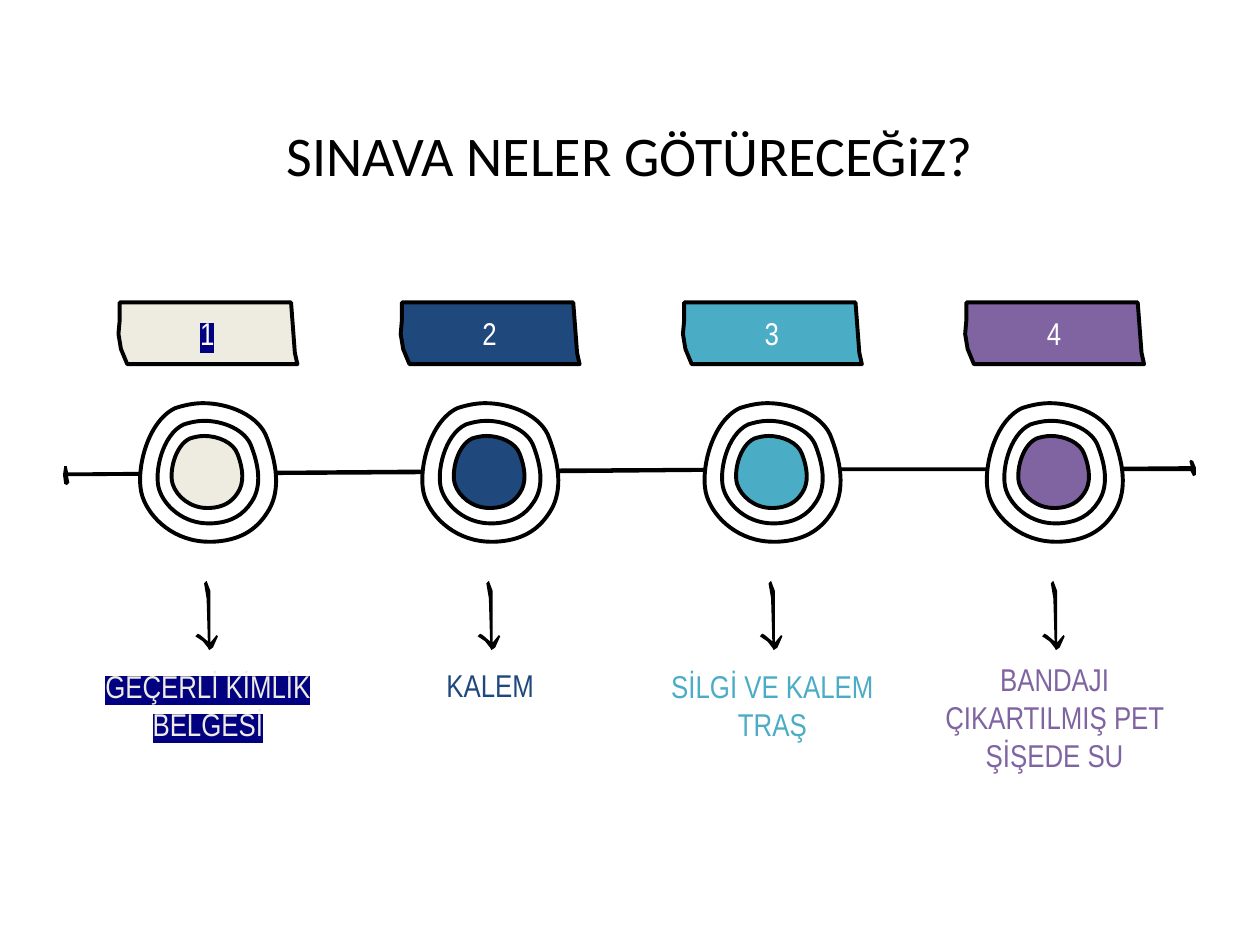
from lxml.etree import SubElement
from pptx import Presentation
from pptx.dml.color import RGBColor
from pptx.enum.text import MSO_ANCHOR, PP_ALIGN
from pptx.oxml.ns import qn
from pptx.util import Inches, Pt

COLORS = {"ink": "000000", "paper": "FFFFFF", "mark": "000080",
          "cream": "EEECE1", "navy": "1F497D", "teal": "4BACC6", "purple": "8064A2"}
PITCH = 2.24

AXIS = [(9.45, 3.65), (9.44, 3.66), (9.45, 3.7), (8.25, 3.71), (6.24, 3.71), (4.24, 3.72),
        (0.54, 3.75), (0.53, 3.7), (0.51, 3.7), (0.5, 3.77), (0.51, 3.84), (0.53, 3.85),
        (0.55, 3.83), (0.54, 3.78), (4.08, 3.76), (6.19, 3.74), (9.45, 3.74), (9.47, 3.78),
        (9.49, 3.77), (9.49, 3.71), (9.47, 3.66)]
RING = [(0.54, 0), (0.46, 0), (0.38, 0.02), (0.32, 0.04), (0.09, 0.15), (0, 0.56), (0.06, 0.74),
        (0.12, 0.92), (0.32, 1.1), (0.59, 1.1), (0.6, 1.1), (0.61, 1.1), (0.62, 1.1),
        (0.83, 1.09), (0.96, 1.01), (1.05, 0.87), (1.15, 0.72), (1.14, 0.52), (1.05, 0.28),
        (0.99, 0.1), (0.75, 0), (0.54, 0)]
BANNER = [(0.02, 0), (0.02, 0.14), (0.01, 0.25), (0.03, 0.37), (0.08, 0.49),
          (1.43, 0.49), (1.41, 0.4), (1.38, 0)]
ARROW = [(0.11, 0.55), (0.14, 0.53), (0.18, 0.44), (0.17, 0.43), (0.12, 0.49), (0.12, 0.22),
         (0.12, 0.08), (0.09, 0), (0.07, 0.02), (0.09, 0.14), (0.1, 0.48), (0.04, 0.43),
         (0.02, 0.42), (0, 0.44), (0.06, 0.48), (0.1, 0.53)]


def draw(s, pts, left, top, fill, k=1, outlined=True, curved=False):
    pts = [(Inches(left + k * x), Inches(top + k * y)) for x, y in pts]
    fb = s.shapes.build_freeform(*pts[0])
    fb.add_line_segments(pts[1:], close=True)
    sp = fb.convert_to_shape()
    sp.shadow.inherit = False
    sp.fill.solid()
    sp.fill.fore_color.rgb = RGBColor.from_string(COLORS[fill])
    if outlined:
        sp.line.color.rgb = RGBColor.from_string(COLORS["ink"])
        sp.line.width = Pt(2.25)
    else:
        sp.line.fill.background()
    if curved:
        outline = sp._element.find(".//" + qn("a:path"))
        lines = outline.findall(qn("a:lnTo"))
        for n in range(0, len(lines), 3):
            curve = SubElement(outline, qn("a:cubicBezTo"))
            for line in lines[n:n + 3]:
                curve.append(line[0])
                outline.remove(line)
        outline.append(outline.find(qn("a:close")))


def write(sp, text, color, size, font, anchor, marked=False):
    tf = sp.text_frame
    inset = Inches(0.1)
    for name, value in {"word_wrap": True, "vertical_anchor": anchor, "margin_left": inset,
                        "margin_right": inset, "margin_top": inset, "margin_bottom": inset}.items():
        setattr(tf, name, value)
    p = tf.paragraphs[0]
    p.alignment = PP_ALIGN.CENTER
    r = p.add_run()
    r.text = text
    for name, value in {"size": Pt(size), "name": font}.items():
        setattr(r.font, name, value)
    r.font.color.rgb = RGBColor.from_string(COLORS[color])
    if marked:
        rPr = r.font._element
        hl = SubElement(rPr, qn("a:highlight"))
        SubElement(hl, qn("a:srgbClr"), val=COLORS["mark"])
        rPr.find(qn("a:solidFill")).addnext(hl)


prs = Presentation()
prs.slide_width, prs.slide_height = Inches(10), Inches(7.5)
s = prs.slides.add_slide(prs.slide_layouts[5])

title = s.shapes.title
for name, value in {"left": 0.5, "top": 0.86, "width": 9, "height": 1.03}.items():
    setattr(title, name, Inches(value))
write(title, "SINAVA NELER GÖTÜRECEĞiZ?", "ink", 32, "Calibri", MSO_ANCHOR.TOP)

draw(s, AXIS, 0, 0, "ink", outlined=False)

items = [("GEÇERLİ KİMLİK BELGESİ", "cream", 5.19, 0.81),
         ("KALEM", "navy", 5.16, 0.56),
         ("SİLGİ VE KALEM TRAŞ", "teal", 5.19, 0.81),
         ("BANDAJI ÇIKARTILMIŞ PET ŞİŞEDE SU", "purple", 5.19, 1)]
for i, (label, color, top, height) in enumerate(items):
    x = i * PITCH
    for left, ring_top, k, fill in [(1.07, 3.2, 1, "paper"), (1.22, 3.34, 0.74, "paper"),
                                    (1.34, 3.46, 0.52, color)]:
        draw(s, RING, x + left, ring_top, fill, k, curved=True)
    draw(s, BANNER, x + 0.93, 2.4, color)
    draw(s, ARROW, x + 1.55, 4.61, "ink", outlined=False)
    for text, ink, box in [(label, color, (x + 0.66, top, 1.98, height)),
                           (str(i + 1), "paper", (x + 1.07, 2.48, 1.15, 0.33))]:
        sp = s.shapes.add_textbox(*map(Inches, box))
        write(sp, text, ink, 18, "Arial Narrow", MSO_ANCHOR.MIDDLE, marked=i == 0)

prs.save("out.pptx")
